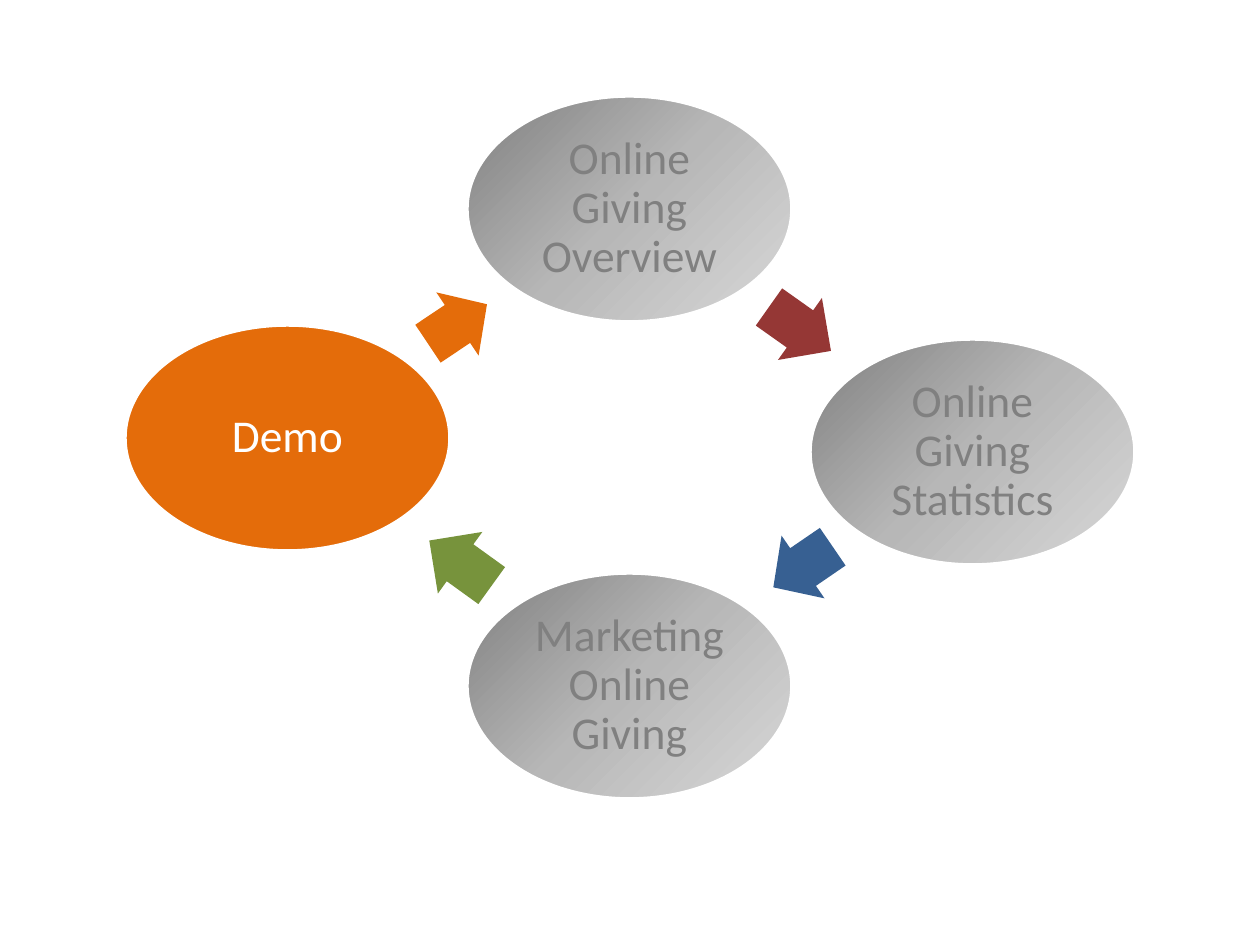
import copy
from dataclasses import dataclass

import pptx
import pptx.dml.color
import pptx.enum.shapes
import pptx.enum.text
import pptx.util

SCALE = 914400 / 126
KIND = pptx.enum.shapes.MSO_SHAPE


@dataclass(frozen=True)
class Theme:
    font: str = "Calibri"
    size: int = 26
    edge: int = 2
    white: str = "FFFFFF"
    gray: str = "808080"
    fade: tuple = ("808080", "B7B7B7", "D9D9D9")
    orange: str = "E46C0A"
    red: str = "953735"
    blue: str = "376092"
    green: str = "77933C"


THEME = Theme()


def px(count):
    return pptx.util.Emu(round(count * SCALE))


def rgb(code):
    return pptx.dml.color.RGBColor.from_string(code)


def add_shape(slide, kind, left, top, width, height):
    shape = slide.shapes.add_shape(kind, px(left), px(top), px(width), px(height))
    shape.shadow.inherit = False
    return shape


def fill_flat(shape, color):
    shape.fill.solid()
    shape.fill.fore_color.rgb = rgb(color)


def fill_fade(shape, colors):
    fill = shape.fill
    fill.gradient()
    fill.gradient_angle = 315
    first = shape._element.spPr.find(".//" + pptx.oxml.ns.qn("a:gs"))
    first.addnext(copy.deepcopy(first))
    for index, (stop, color) in enumerate(zip(fill.gradient_stops, colors)):
        stop.position = index / (len(colors) - 1)
        stop.color.rgb = rgb(color)


def add_topic(slide, left, top, label, active=False):
    oval = add_shape(slide, KIND.OVAL, left, top, 325, 226)
    if active:
        fill_flat(oval, THEME.orange)
    else:
        fill_fade(oval, THEME.fade)
    oval.line.color.rgb = rgb(THEME.white)
    oval.line.width = pptx.util.Pt(THEME.edge)
    frame = oval.text_frame
    frame.word_wrap = True
    frame.vertical_anchor = pptx.enum.text.MSO_ANCHOR.MIDDLE
    frame.margin_left = frame.margin_right = px(5)
    frame.margin_top = frame.margin_bottom = px(5)
    frame.text = label
    para = frame.paragraphs[0]
    para.alignment = pptx.enum.text.PP_ALIGN.CENTER
    para.line_spacing = 0.9
    para.font.name = THEME.font
    para.font.size = pptx.util.Pt(THEME.size)
    para.font.color.rgb = rgb(THEME.white if active else THEME.gray)


def add_arrow(slide, left, top, width, turn, color):
    arrow = add_shape(slide, KIND.RIGHT_ARROW, left, top, width, 76)
    arrow.adjustments[0] = 0.6
    arrow.adjustments[1] = 0.5
    arrow.rotation = turn
    fill_flat(arrow, color)
    arrow.line.fill.background()


def main():
    deck = pptx.Presentation()
    deck.slide_width, deck.slide_height = px(1260), px(945)
    slide = deck.slides.add_slide(deck.slide_layouts[6])
    add_topic(slide, 467, 96, "Online Giving Overview")
    add_arrow(slide, 762, 291, 76, 35.3, THEME.red)
    add_topic(slide, 810, 339, "Online Giving Statistics")
    add_arrow(slide, 767, 529, 72, 145.6, THEME.blue)
    add_topic(slide, 467, 573, "Marketing Online Giving")
    add_arrow(slide, 422, 525, 77, 215.8, THEME.green)
    add_topic(slide, 125, 325, "Demo", active=True)
    add_arrow(slide, 422, 286, 71, 326.2, THEME.orange)
    deck.save("out.pptx")


if __name__ == "__main__":
    main()
